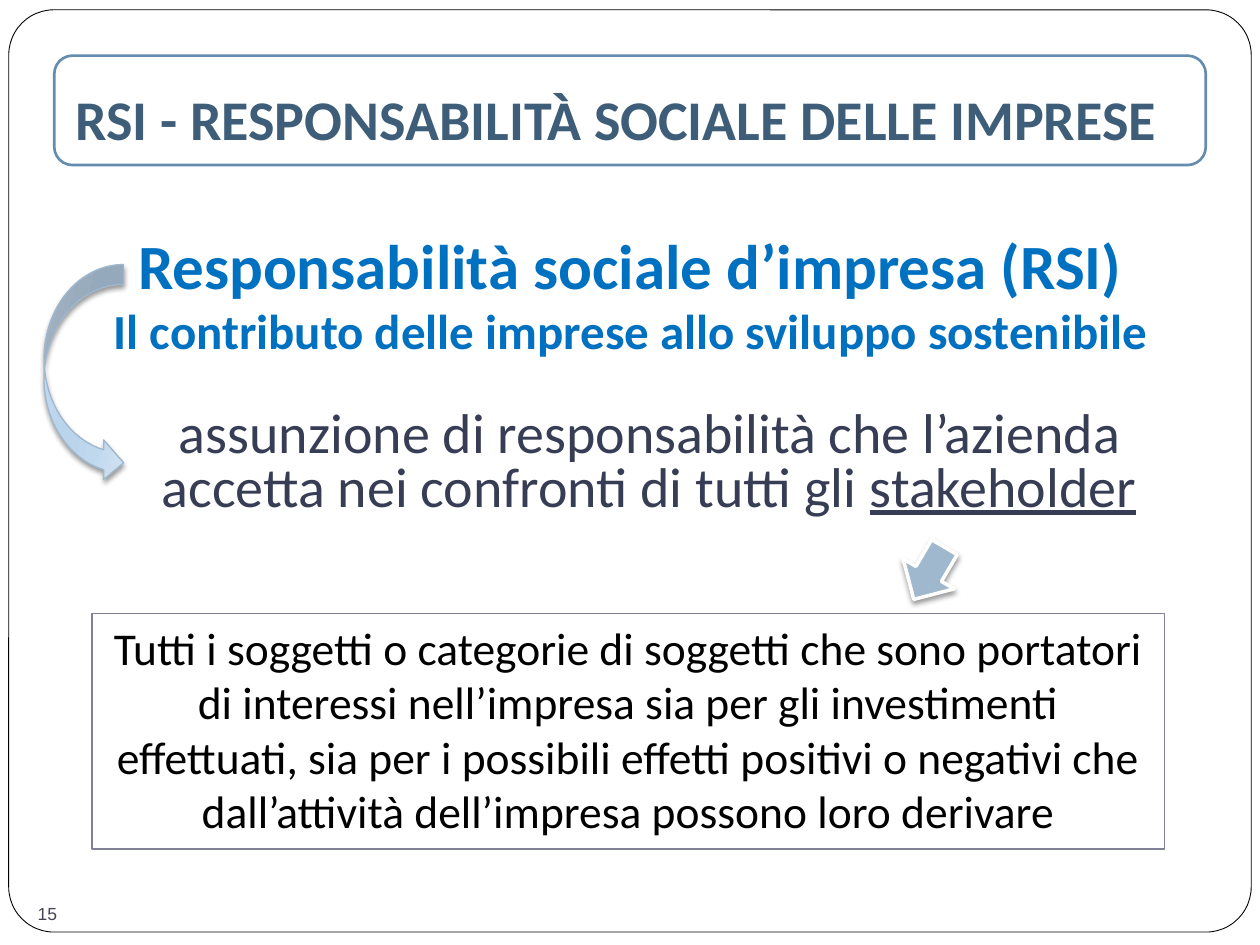
from lxml import etree
from pptx import Presentation
from pptx.dml.color import RGBColor
from pptx.enum import shapes, text
from pptx.oxml import parse_xml
from pptx.util import Pt

NS = 'xmlns:a="http://schemas.openxmlformats.org/drawingml/2006/main"'
SHAPE = shapes.MSO_SHAPE
ALIGN = text.PP_ALIGN
ANCHOR = text.MSO_ANCHOR

COLORS = {
    "white": "FFFFFF", "black": "000000", "frame": "638CAE", "title": "3E5D78",
    "headline": "0070C0", "definition": "373D54", "box": "818195",
    "arrow": "9FB8CD", "number": "464653",
}
ARROW_GRADIENT = [(0, "D3E3F2"), (30, "C0D8EE"), (45, "BAD4EC"),
                  (55, "BAD4EC"), (73, "C0D8EE"), (100, "D3E3F2")]

# A paragraph is a list of (wording, underlined) runs.
TITLE = [("RSI - RESPONSABILITÀ SOCIALE DELLE IMPRESE", False)]
HEADLINE = [("Responsabilità sociale d’impresa (RSI)", False)]
SUBHEAD = [("Il contributo delle imprese allo sviluppo sostenibile", False)]
DEFINITION = [
    ("assunzione di responsabilità che l’azienda accetta nei confronti di tutti gli ", False),
    ("stakeholder", True),
]
STAKEHOLDERS = [
    ("Tutti i soggetti o categorie di soggetti che sono portatori di interessi "
     "nell’impresa sia per gli investimenti effettuati, sia per i possibili effetti "
     "positivi o negativi che dall’attività dell’impresa possono loro derivare", False),
]
NUMBER = [("15", False)]


def rgb(name):
    return RGBColor.from_string(COLORS[name])


def add_shape(slide, kind, box, line, width, fill=None):
    shape = slide.shapes.add_shape(kind, *map(Pt, box))
    shape.shadow.inherit = False
    if fill:
        shape.fill.solid()
        shape.fill.fore_color.rgb = rgb(fill)
    else:
        shape.fill.background()
    shape.line.color.rgb = rgb(line)
    shape.line.width = Pt(width)
    return shape


def add_text_box(slide, box, anchor=ANCHOR.TOP):
    frame = slide.shapes.add_textbox(*map(Pt, box)).text_frame
    frame.word_wrap = True
    frame.vertical_anchor = anchor
    return frame


def write(paragraph, runs, size, color, font="Calibri", bold=False,
          align=ALIGN.CENTER, spacing=1.0, before=0):
    paragraph.alignment = align
    paragraph.line_spacing = spacing
    paragraph.space_before = Pt(before)
    for wording, underlined in runs:
        run = paragraph.add_run()
        run.text = wording
        run.font.name = font
        run.font.size = Pt(size)
        run.font.bold = bold
        run.font.underline = underlined
        run.font.color.rgb = rgb(color)


def cast_shadow(shape):
    effects = shape._element.spPr.find("{*}effectLst")
    shadow = parse_xml(
        f'<a:outerShdw {NS} blurRad="{Pt(3)}" dist="{Pt(2)}" dir="5400000" rotWithShape="0">'
        f'<a:srgbClr val="{COLORS["black"]}"><a:alpha val="40000"/></a:srgbClr></a:outerShdw>')
    effects.append(shadow)


def fill_gradient(shape, stops, angle):
    shape.fill.gradient()
    shape.fill.gradient_angle = -angle % 360  # python-pptx counts counter-clockwise
    stop_list = shape._element.spPr.find("{*}gradFill/{*}gsLst")
    for old in list(stop_list):
        stop_list.remove(old)
    for position, color in stops:
        stop = etree.SubElement(stop_list, stop_list.tag.replace("gsLst", "gs"),
                                pos=str(position * 1000))
        stop.append(parse_xml(f'<a:srgbClr {NS} val="{color}"/>'))


def main():
    deck = Presentation()
    deck.slide_width, deck.slide_height = Pt(720), Pt(540)
    slide = deck.slides.add_slide(deck.slide_layouts[6])

    border = add_shape(slide, SHAPE.ROUNDED_RECTANGLE, (5, 5.6, 710, 527),
                       "black", 0.5, "white")
    border.adjustments[0] = 0.049
    add_shape(slide, SHAPE.ROUNDED_RECTANGLE, (31, 31.8, 658, 62.5), "frame", 1.5)

    headline = add_text_box(slide, (17.2, 134, 686, 78.5))
    write(headline.paragraphs[0], HEADLINE, 36, "headline", bold=True, spacing=0.8, before=6)
    write(headline.add_paragraph(), SUBHEAD, 28, "headline", bold=True, spacing=0.8, before=6)

    definition = add_text_box(slide, (36.7, 231, 641, 69)).paragraphs[0]
    write(definition, DEFINITION, 32, "definition", spacing=0.8, before=6)
    indents = definition._p.get_or_add_pPr()
    indents.set("marL", str(Pt(27.4)))
    indents.set("indent", str(Pt(1.4)))

    box = add_shape(slide, SHAPE.RECTANGLE, (52.6, 350.6, 613, 134.6), "box", 0.75)
    box.text_frame.word_wrap = True
    box.text_frame.vertical_anchor = ANCHOR.TOP
    write(box.text_frame.paragraphs[0], STAKEHOLDERS, 26, "black", before=5.2)

    down_arrow = add_shape(slide, SHAPE.DOWN_ARROW, (514, 310.3, 33.8, 34.6),
                           "white", 2, "arrow")
    down_arrow.rotation = 30.4
    cast_shadow(down_arrow)

    number = add_text_box(slide, (14.4, 502.6, 96, 28.8), ANCHOR.BOTTOM)
    write(number.paragraphs[0], NUMBER, 10, "number", font="Arial", align=ALIGN.LEFT)

    title = add_text_box(slide, (36, 12.2, 648, 77.8), ANCHOR.BOTTOM)
    write(title.paragraphs[0], TITLE, 32, "title", bold=True, align=ALIGN.LEFT)

    curved_arrow = add_shape(slide, SHAPE.CURVED_RIGHT_ARROW, (25.2, 151.2, 45.4, 124.6),
                             "arrow", 0.75)
    fill_gradient(curved_arrow, ARROW_GRADIENT, 16)
    cast_shadow(curved_arrow)

    deck.save("out.pptx")


if __name__ == "__main__":
    main()
